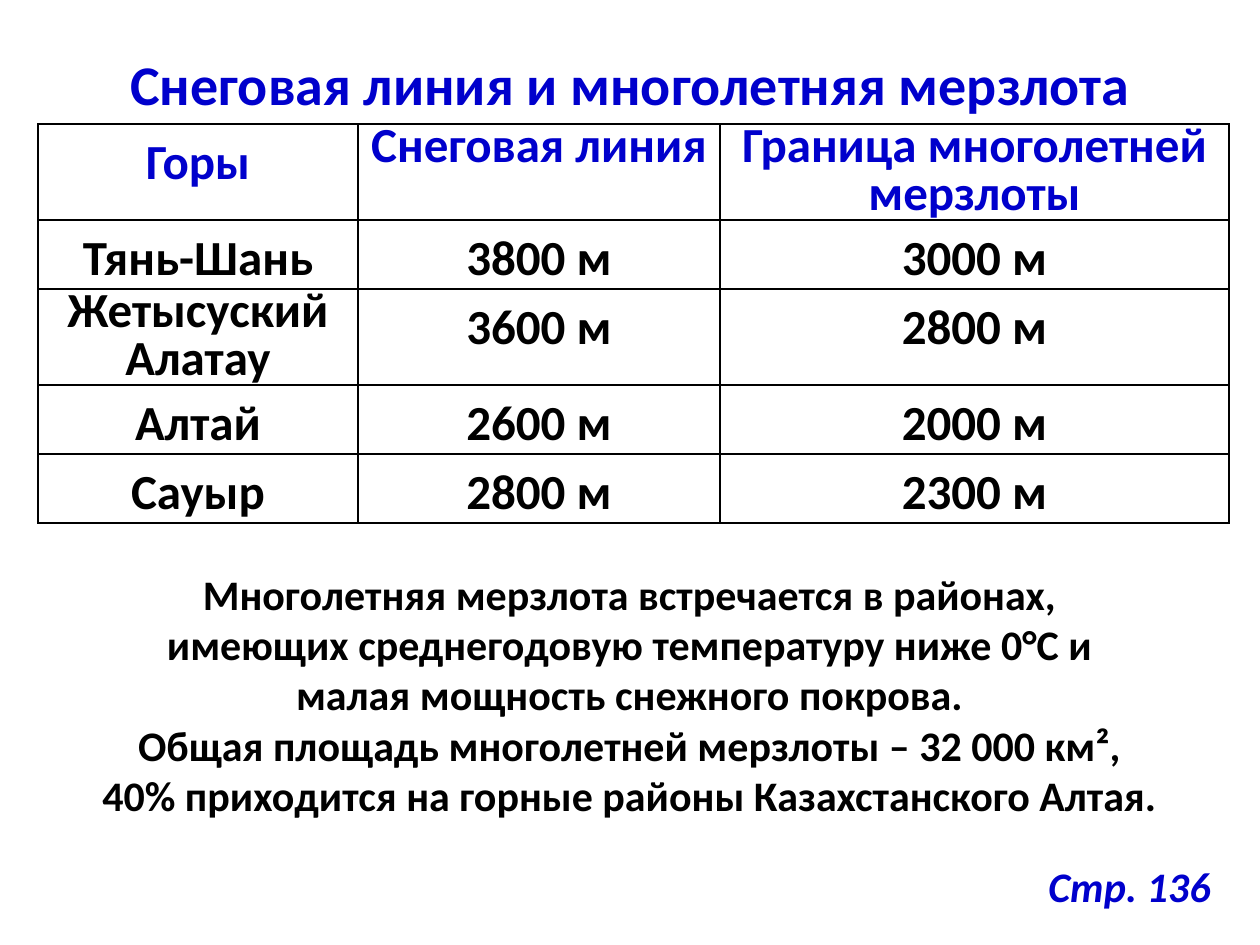
from lxml import etree
from pptx import Presentation
from pptx.dml.color import RGBColor
from pptx.enum.text import MSO_ANCHOR, PP_ALIGN
from pptx.oxml.ns import qn
from pptx.util import Emu, Pt

LEFT, CENTER = PP_ALIGN.LEFT, PP_ALIGN.CENTER
TOP = MSO_ANCHOR.TOP
BLUE, BLACK = "0000CC", "000000"
BORDER_SIDES = ("a:lnL", "a:lnR", "a:lnT", "a:lnB")
TIGHT, LOOSE = 0.8, 1.15

COLUMN_WIDTHS = (320, 362, 509)
ONE_LINE_ROW, TWO_LINE_ROW = 69, 96
ROW_HEIGHTS = (TWO_LINE_ROW, ONE_LINE_ROW, TWO_LINE_ROW, ONE_LINE_ROW, ONE_LINE_ROW)
MOUNTAINS = (
    ("Горы", "Снеговая линия", "Граница многолетней мерзлоты"),
    ("Тянь-Шань", "3800 м", "3000 м"),
    ("Жетысуский Алатау", "3600 м", "2800 м"),
    ("Алтай", "2600 м", "2000 м"),
    ("Сауыр", "2800 м", "2300 м"),
)
TIGHT_CELLS = {(0, 1), (0, 2), (2, 0)}
FACTS = (
    "Многолетняя мерзлота встречается в районах,",
    "имеющих среднегодовую температуру ниже 0°С и",
    "малая мощность снежного покрова.",
    "Общая площадь многолетней мерзлоты – 32 000 км²,",
    "40% приходится на горные районы Казахстанского Алтая.",
)


def px(length):
    return Emu(round(length * 914400 / 126))


def color(hex_string):
    return RGBColor.from_string(hex_string)


class SlideWriter:
    """Holds the text style and the slide being filled."""

    font_name = "Calibri"
    table_size = 28

    def __init__(self, slide):
        self.slide = slide

    def style(self, para, size, ink, align=CENTER, italic=False):
        para.alignment = align
        for span in para.runs:
            font = span.font
            font.name, font.size = self.font_name, Pt(size)
            font.bold, font.italic = True, italic
            font.color.rgb = color(ink)

    def text(self, lines, left, top, width, height, size, ink,
             align=CENTER, italic=False, wrap=True):
        box = self.slide.shapes.add_textbox(px(left), px(top), px(width), px(height))
        frame = box.text_frame
        frame.word_wrap = wrap
        frame.text = "\n".join(lines)
        for para in frame.paragraphs:
            self.style(para, size, ink, align, italic)

    def border(self, cell):
        properties = cell._tc.get_or_add_tcPr()
        for side in BORDER_SIDES:
            line = etree.SubElement(properties, qn(side), w=str(Pt(1)))
            fill = etree.SubElement(line, qn("a:solidFill"))
            etree.SubElement(fill, qn("a:srgbClr"), val=BLACK)

    def cell(self, cell, words, ink, spacing):
        cell.margin_left = cell.margin_right = px(9)
        cell.margin_top = cell.margin_bottom = 0
        cell.vertical_anchor = TOP
        self.border(cell)
        cell.fill.background()
        cell.text_frame.text = words
        para = cell.text_frame.paragraphs[0]
        para.line_spacing = spacing
        self.style(para, self.table_size, ink)

    def table(self, rows, left, top, widths, heights, tight_cells):
        frame = self.slide.shapes.add_table(
            len(rows), len(widths), px(left), px(top), px(sum(widths)), px(sum(heights)))
        table = frame.table
        table.first_row = table.horz_banding = False
        for column, width in zip(table.columns, widths):
            column.width = px(width)
        for row, height in zip(table.rows, heights):
            row.height = px(height)
        for r, row in enumerate(rows):
            for c, words in enumerate(row):
                self.cell(table.cell(r, c), words, BLACK if r else BLUE,
                          TIGHT if (r, c) in tight_cells else LOOSE)


def main():
    deck = Presentation()
    deck.slide_width, deck.slide_height = px(1260), px(945)
    page = SlideWriter(deck.slides.add_slide(deck.slide_layouts[6]))
    page.table(MOUNTAINS, 38, 124, COLUMN_WIDTHS, ROW_HEIGHTS, TIGHT_CELLS)
    page.text(["Стр. 136"], 1036, 854, 189, 63, 24, BLUE, LEFT, italic=True, wrap=False)
    page.text(["Снеговая линия и многолетняя мерзлота"], 35, 43, 1191, 81, 32, BLUE)
    page.text(FACTS, 34, 562, 1191, 267, 24, BLACK)
    deck.save("out.pptx")


if __name__ == "__main__":
    main()
